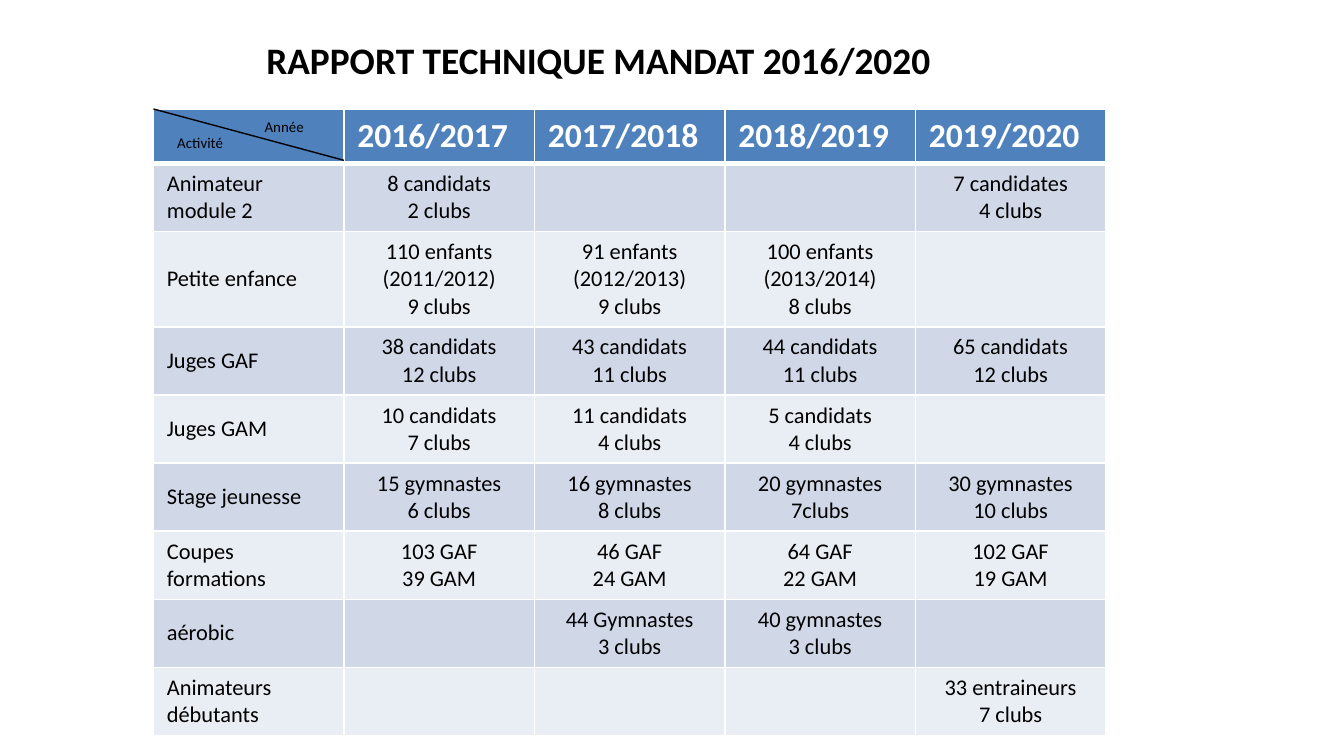
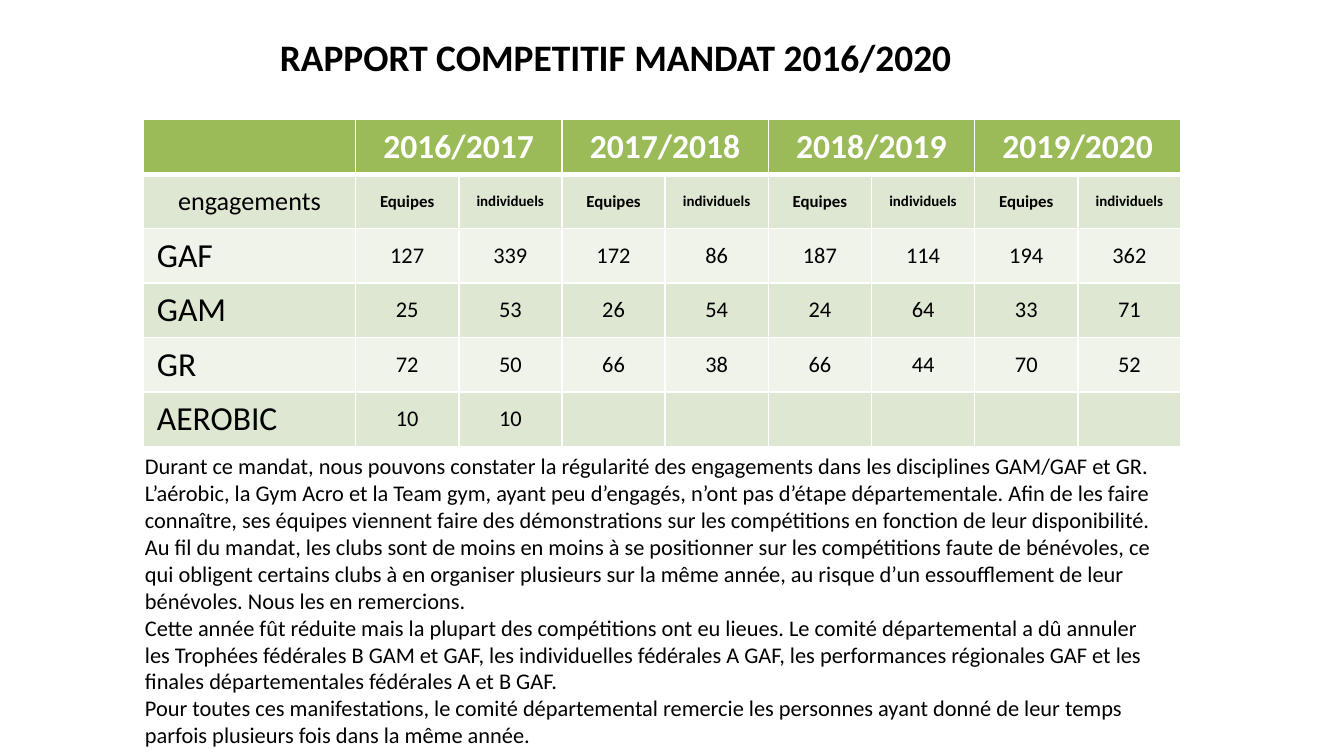
from dataclasses import dataclass

from lxml.etree import SubElement
from pptx import Presentation
from pptx.dml.color import RGBColor
from pptx.enum.text import MSO_ANCHOR, MSO_AUTO_SIZE, PP_ALIGN
from pptx.oxml.ns import qn
from pptx.util import Cm, Pt


@dataclass(frozen=True)
class Theme:
    """Colours, type sizes and line widths shared by both slides."""
    font: str = "Calibri"
    ink: str = "000000"
    paper: str = "FFFFFF"
    blue: tuple = ("4F81BD", "D0D8E8", "E9EDF4")
    green: tuple = ("9BBB59", "DEE7D1", "EFF3EA")
    title: int = 20
    head: int = 18
    label: int = 14
    body: int = 12
    team: int = 9
    small: int = 8
    thin: float = 1
    thick: float = 3
    diagonal: float = 0.75


T = Theme()
YEARS = ["2016/2017", "2017/2018", "2018/2019", "2019/2020"]
ROW_H = 1.03

ACTIVITIES = [
    ["Animateur module 2", "8 candidats\n2 clubs", "", "", "7 candidates\n4 clubs"],
    ["Petite enfance", "110 enfants (2011/2012)\n9 clubs", "91 enfants\n(2012/2013)\n9 clubs",
     "100 enfants\n(2013/2014)\n8 clubs", ""],
    ["Juges GAF", "38 candidats\n12 clubs", "43 candidats\n11 clubs",
     "44 candidats\n11 clubs", "65 candidats\n12 clubs"],
    ["Juges GAM", "10 candidats\n7 clubs", "11 candidats\n4 clubs", "5 candidats\n4 clubs", ""],
    ["Stage jeunesse", "15 gymnastes\n6 clubs", "16 gymnastes\n8 clubs",
     "20 gymnastes\n7clubs", "30 gymnastes\n10 clubs"],
    ["Coupes formations", "103 GAF\n39 GAM", "46 GAF\n24 GAM", "64 GAF\n22 GAM",
     "102 GAF\n19 GAM"],
    ["aérobic", "", "44 Gymnastes\n3 clubs", "40 gymnastes\n3 clubs", ""],
    ["Animateurs débutants", "", "", "", "33 entraineurs\n7 clubs"],
]

ENTRIES = [
    ["GAF", 127, 339, 172, 86, 187, 114, 194, 362],
    ["GAM", 25, 53, 26, 54, 24, 64, 33, 71],
    ["GR", 72, 50, 66, 38, 66, 44, 70, 52],
    ["AEROBIC", 10, 10] + [""] * 6,
]

REVIEW = [
    "Durant ce mandat, nous pouvons constater la régularité des engagements dans les "
    "disciplines GAM/GAF et GR.",
    "L’aérobic, la Gym Acro et la Team gym, ayant peu d’engagés, n’ont pas d’étape "
    "départementale. Afin de les faire connaître, ses équipes viennent faire des "
    "démonstrations sur les compétitions en fonction de leur disponibilité.",
    "Au fil du mandat, les clubs sont de moins en moins à se positionner sur les "
    "compétitions faute de bénévoles, ce qui obligent certains clubs à en organiser "
    "plusieurs sur la même année, au risque d’un essoufflement de leur bénévoles. "
    "Nous les en remercions.",
    "Cette année fût réduite mais la plupart des compétitions ont eu lieues. Le comité "
    "départemental a dû annuler les Trophées fédérales B GAM et GAF, les individuelles "
    "fédérales A GAF, les performances régionales GAF et les finales départementales "
    "fédérales A et B GAF.",
    "Pour toutes ces manifestations, le comité départemental remercie les personnes ayant "
    "donné de leur temps parfois plusieurs fois dans la même année.",
]


def write(tf, lines, size, bold=False, color=T.ink, align=PP_ALIGN.LEFT):
    """Fill a text frame with one paragraph per line."""
    for i, line in enumerate(lines):
        p = tf.add_paragraph() if i else tf.paragraphs[0]
        p.alignment = align
        r = p.add_run()
        r.text = line
        for name, value in {"name": T.font, "size": Pt(size), "bold": bold}.items():
            setattr(r.font, name, value)
        r.font.color.rgb = RGBColor.from_string(color)


def add_text(shapes, box, lines, size, **look):
    """Add a wrapped text box that grows with its text."""
    tf = shapes.add_textbox(*map(Cm, box)).text_frame
    for name, value in {"word_wrap": True, "auto_size": MSO_AUTO_SIZE.SHAPE_TO_FIT_TEXT}.items():
        setattr(tf, name, value)
    write(tf, lines, size, **look)


def add_title(s, box, text):
    """Add the slide title."""
    add_text(s.shapes, box, [text], T.title, bold=True, align=PP_ALIGN.CENTER)


def set_borders(cell, top, bottom):
    """Draw white borders around a table cell."""
    tcPr = cell._tc.get_or_add_tcPr()
    for side, width in {"L": T.thin, "R": T.thin, "T": top, "B": bottom}.items():
        ln = SubElement(tcPr, qn(f"a:ln{side}"), w=str(Pt(width)))
        SubElement(SubElement(ln, qn("a:solidFill")), qn("a:srgbClr"), val=T.paper)


def add_grid(s, box, widths, rows, palette, look):
    """Add a banded table whose text format is given by look(row, column)."""
    left, top, width = box
    frame = s.shapes.add_table(len(rows), len(widths), Cm(left), Cm(top), Cm(width),
                               Cm(ROW_H * len(rows)))
    table = frame.table
    table.horz_banding = False
    for col, w in zip(table.columns, widths):
        col.width = Cm(w)
    for i, values in enumerate(rows):
        table.rows[i].height = Cm(ROW_H)
        fill = palette[2 - i % 2] if i else palette[0]
        for j, value in enumerate(values):
            cell = table.cell(i, j)
            set_borders(cell, T.thick if i == 1 else T.thin, T.thin if i else T.thick)
            cell.fill.solid()
            cell.fill.fore_color.rgb = RGBColor.from_string(fill)
            anchor, fmt = look(i, j)
            cell.vertical_anchor = anchor
            if value != "":
                write(cell.text_frame, str(value).split("\n"), **fmt)
    return table


def activity_look(i, j):
    """Give the text format of a cell in the activity table."""
    if i == 0:
        return MSO_ANCHOR.TOP, {"size": T.head, "bold": True, "color": T.paper}
    align = PP_ALIGN.CENTER if j else PP_ALIGN.LEFT
    return MSO_ANCHOR.MIDDLE, {"size": T.body, "align": align}


def entry_look(i, j):
    """Give the text format of a cell in the entry table."""
    if i > 1 and j == 0:
        return MSO_ANCHOR.TOP, {"size": T.head}
    if i == 0:
        fmt = {"size": T.head, "bold": True, "color": T.paper}
    elif i == 1:
        fmt = {"size": (T.team if j % 2 else T.small) if j else T.label, "bold": j > 0}
    else:
        fmt = {"size": T.body}
    return MSO_ANCHOR.MIDDLE, {**fmt, "align": PP_ALIGN.CENTER}


def add_split_corner(s, box):
    """Split the corner cell between its two axis labels."""
    x, y, w, h = box
    shapes = s.shapes.add_group_shape().shapes
    line = shapes.add_connector(1, Cm(x), Cm(y), Cm(x + w), Cm(y + h))
    line.line.width = Pt(T.diagonal)
    line.line.color.rgb = RGBColor.from_string(T.ink)
    SubElement(line._element.spPr, qn("a:effectLst"))
    add_text(shapes, (x + 1.85, y + 0.03, 1.6, 0.6), ["Année"], T.small)
    add_text(shapes, (x + 0.2, y + 0.35, 1.65, 0.6), ["Activité"], T.small)


def technical_slide(s, box):
    """Build the technical report inside the given table box."""
    x, y, w = box
    col = w / 5
    add_grid(s, box, [col] * 5, [[""] + YEARS] + ACTIVITIES, T.blue, activity_look)
    add_split_corner(s, (x, y, col, 0.97))
    add_title(s, (x + 1.01, y - 1.48, 14.81, 1.12), "RAPPORT TECHNIQUE MANDAT 2016/2020")


def competition_slide(s, box):
    """Build the competition report inside the given table box."""
    x, y, w = box
    label_w = 4.01
    heads = [""] + [text for year in YEARS for text in (year, "")]
    kinds = ["engagements"] + ["Equipes", "individuels"] * len(YEARS)
    add_title(s, (x + 0.43, y - 1.73, 17, 1.12), "RAPPORT COMPETITIF MANDAT 2016/2020")
    table = add_grid(s, box, [label_w] + [(w - label_w) / 8] * 8, [heads, kinds] + ENTRIES,
                     T.green, entry_look)
    for j in range(1, 9, 2):
        table.cell(0, j).merge(table.cell(0, j + 1))
    add_text(s.shapes, (x - 0.22, y + 6.17, w, 5.9), REVIEW, T.body)


def main():
    """Build and save both report slides."""
    prs = Presentation()
    prs.slide_width, prs.slide_height = Cm(25.4), Cm(14.29)
    blank = prs.slide_layouts[6]
    technical_slide(prs.slides.add_slide(blank), (2.9, 2.06, 18))
    competition_slide(prs.slides.add_slide(blank), (2.71, 2.26, 19.61))
    prs.save("out.pptx")


if __name__ == "__main__":
    main()
